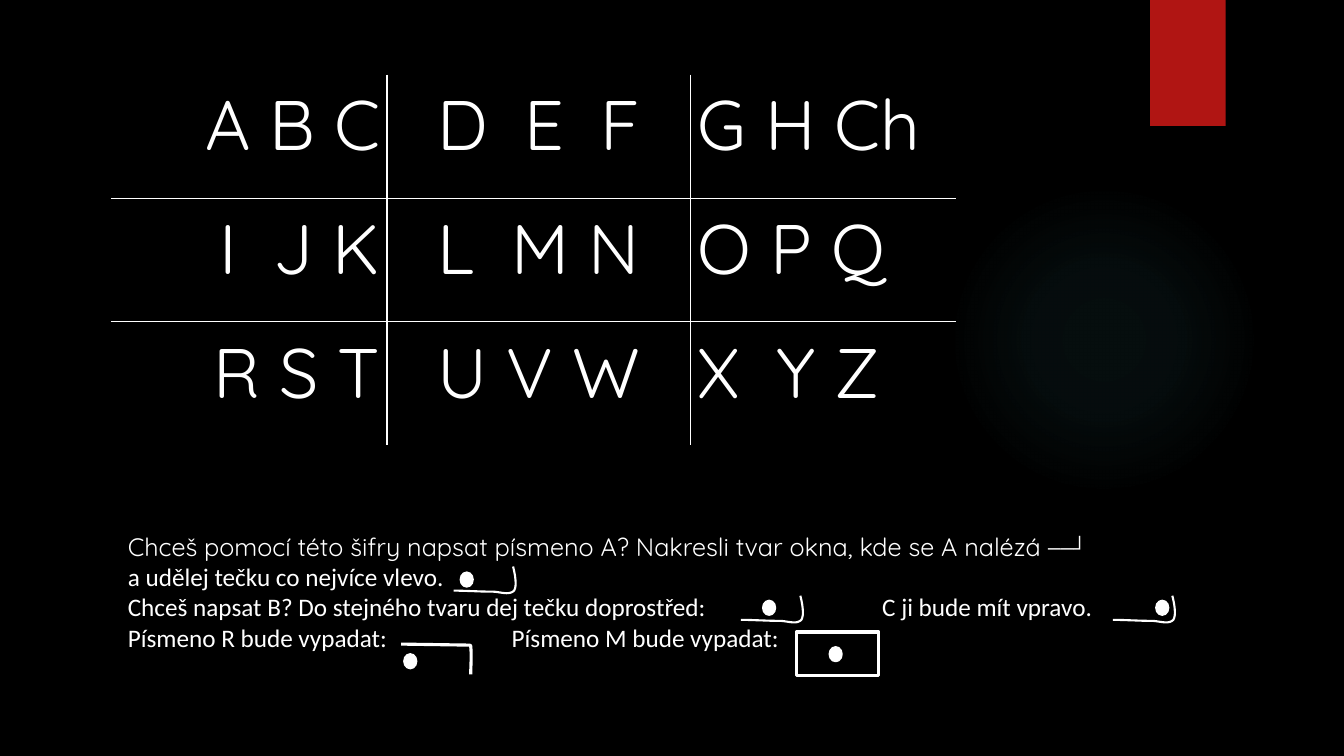
from lxml.etree import SubElement
from pptx import Presentation
from pptx.dml.color import RGBColor
from pptx.enum.shapes import MSO_SHAPE
from pptx.enum.text import PP_ALIGN
from pptx.oxml.ns import qn
from pptx.util import Inches, Pt

COLORS = {"back": "000000", "ink": "FFFFFF", "flag": "B01513", "glow": "50B9C1"}
PLAIN = "{2D5ABB26-0587-4C30-8999-92F81FD0307C}"
COLS, ROWS = 160, 90

# An underscore marks a wide gap between letters.
LETTERS = [
    ["A B C", "D_E_F", "G H Ch"],
    ["I_J K", "L_M N", "O P Q"],
    ["R S T", "U V W", "X_Y Z"],
]
SIDES = [PP_ALIGN.RIGHT, PP_ALIGN.CENTER, PP_ALIGN.LEFT]

# Each line of the guide with its tab stop in columns.
GUIDE = [
    ("Chceš pomocí této šifry napsat písmeno A? Nakresli tvar okna, kde se A nalézá ──┘", None),
    ("a udělej tečku co nejvíce vlevo.", None),
    ("Chceš napsat B? Do stejného tvaru dej tečku doprostřed:\tC ji bude mít vpravo.", 89.8),
    ("Písmeno R bude vypadat:\tPísmeno M bude vypadat:", 45.7),
]

# Start point, then cubic curves (three points) or straight lines (one point).
HOOK = [
    [(0, 2.88)],
    [(1.56, 2.88), (3.12, 3), (4.68, 3)],
    [(5.52, 3), (6.6, 3.48), (7.2, 2.88)],
    [(7.68, 2.16), (7.08, 0), (7.08, 0)],
]
CORNER = [
    [(0, 0)],
    [(7.8, 0.12)],
    [(8, 0.12), (8.28, 0.12), (8.28, 0.24)],
    [(8.4, 1.44), (8.28, 2.52), (8.28, 3.6)],
]
HOOKS = [(54, 67.44), (88.2, 70.92), (132.48, 70.92)]
DOTS = [(54.84, 68.16), (90.84, 71.52), (137.64, 71.52), (98.76, 77.04), (48.12, 77.88)]


def color(name):
    return RGBColor.from_string(COLORS[name])


def trace(parts, steps=10):
    """Turn lines and cubic curves into a list of points."""
    points = list(parts[0])
    for part in parts[1:]:
        if len(part) == 1:
            points += part
            continue
        knots = [points[-1], *part]
        for step in range(1, steps + 1):
            t = step / steps
            mix = [(1 - t) ** 3, 3 * t * (1 - t) ** 2, 3 * t * t * (1 - t), t ** 3]
            points.append(tuple(sum(m * k[axis] for m, k in zip(mix, knots)) for axis in (0, 1)))
    return points


class Board:
    def __init__(self, deck):
        self.wide, self.high = deck.slide_width, deck.slide_height
        self.slide = deck.slides.add_slide(deck.slide_layouts[6])
        self.shapes = self.slide.shapes
        fill = self.slide.background.fill
        fill.solid()
        fill.fore_color.rgb = color("back")

    def x(self, cols):
        return round(self.wide * cols / COLS)

    def y(self, rows):
        return round(self.high * rows / ROWS)

    def area(self, left, top, width, height):
        return self.x(left), self.y(top), self.x(width), self.y(height)

    def paint(self, shape, fill=None, line=None):
        shape.shadow.inherit = False
        if fill:
            shape.fill.solid()
            shape.fill.fore_color.rgb = color(fill)
        else:
            shape.fill.background()
        if line:
            shape.line.color.rgb = color("ink")
            shape.line.width = Pt(line)
        else:
            shape.line.fill.background()

    def shape(self, kind, area, fill=None, line=None):
        shape = self.shapes.add_shape(kind, *self.area(*area))
        self.paint(shape, fill, line)
        return shape

    def glow(self, area):
        shape = self.shape(MSO_SHAPE.OVAL, area, "glow")
        old = shape.fill._xPr.find(qn("a:solidFill"))
        grad = old.makeelement(qn("a:gradFill"), {"rotWithShape": "1"})
        stops = SubElement(grad, qn("a:gsLst"))
        for place, alpha in [(0, 7), (36, 6), (69, 0)]:
            stop = SubElement(stops, qn("a:gs"), pos=str(place * 1000))
            tone = SubElement(stop, qn("a:srgbClr"), val=COLORS["glow"])
            SubElement(tone, qn("a:alpha"), val=str(alpha * 1000))
        fade = SubElement(grad, qn("a:path"), {"path": "circle"})
        SubElement(fade, qn("a:fillToRect"), dict.fromkeys("ltrb", "50000"))
        old.getparent().replace(old, grad)

    def stroke(self, left, top, parts, line):
        points = [(self.x(left + x), self.y(top + y)) for x, y in trace(parts)]
        pen = self.shapes.build_freeform(*points[0])
        pen.add_line_segments(points[1:], close=False)
        self.paint(pen.convert_to_shape(), line=line)

    def style(self, run, size, font):
        run.font.size = Pt(size)
        run.font.name = font
        run.font.color.rgb = color("ink")

    def edge(self, cell, tags):
        """Draw the named cell borders and clear the others."""
        props = cell._tc.get_or_add_tcPr()
        for spot, tag in enumerate(["lnL", "lnR", "lnT", "lnB"]):
            line = props.makeelement(qn("a:" + tag), {"w": str(Pt(1))})
            if tag in tags:
                tone = SubElement(line, qn("a:solidFill"))
                SubElement(tone, qn("a:srgbClr"), val=COLORS["ink"])
            else:
                SubElement(line, qn("a:noFill"))
            props.insert(spot, line)

    def letters(self, cell, text, side):
        cell.margin_left = cell.margin_right = Inches(0.07)
        cell.margin_top = cell.margin_bottom = 0
        para = cell.text_frame.paragraphs[0]
        para.alignment = side
        para.line_spacing = 1.07
        for spot, part in enumerate(text.split("_")):
            if spot:
                gap = para.add_run()
                gap.text = " "
                self.style(gap, 50, "Quicksand")
                gap.font._element.set("spc", "1250")
            run = para.add_run()
            run.text = part
            self.style(run, 50, "Quicksand")

    def table(self, left, top, widths, height):
        count = len(LETTERS)
        area = self.area(left, top, sum(widths), height * count)
        table = self.shapes.add_table(count, len(widths), *area).table
        table.first_row = table.horz_banding = False
        table._tbl.tblPr.find(qn("a:tableStyleId")).text = PLAIN
        for col, width in zip(table.columns, widths):
            col.width = self.x(width)
        for r, texts in enumerate(LETTERS):
            table.rows[r].height = self.y(height)
            for c, text in enumerate(texts):
                cell = table.cell(r, c)
                cell.fill.background()
                inner = {"lnL": c > 0, "lnR": c < len(widths) - 1, "lnT": r > 0, "lnB": r < count - 1}
                self.edge(cell, [tag for tag, show in inner.items() if show])
                self.letters(cell, text, SIDES[c])

    def guide(self, area):
        frame = self.shapes.add_textbox(*self.area(*area)).text_frame
        frame.word_wrap = True
        frame.text = "\n".join(text for text, stop in GUIDE)
        for para, (text, stop) in zip(frame.paragraphs, GUIDE):
            if stop:
                tabs = SubElement(para._p.get_or_add_pPr(), qn("a:tabLst"))
                SubElement(tabs, qn("a:tab"), pos=str(self.x(stop)), algn="l")
            for run in para.runs:
                self.style(run, 18, "Calibri")
        first = frame.paragraphs[0]
        words, mark = GUIDE[0][0][:-3], GUIDE[0][0][-3:]
        first.runs[0].text = words
        self.style(first.runs[0], 18, "Quicksand")
        tail = first.add_run()
        tail.text = mark
        self.style(tail, 18, "Calibri")


def main():
    deck = Presentation()
    deck.slide_width, deck.slide_height = Inches(13.33), Inches(7.5)
    board = Board(deck)
    board.glow((112.92, 21.96, 36.96, 36.96))
    board.shape(MSO_SHAPE.RECTANGLE, (136.92, 0, 9, 15), "flag")
    board.table(13.2, 8.88, [32.88, 36.12, 31.68], 14.72)
    board.guide((14.04, 62.64, 123.48, 15.72))
    for left, top in HOOKS:
        board.stroke(left, top, HOOK, 1.5)
    board.stroke(47.76, 76.68, CORNER, 2.25)
    board.shape(MSO_SHAPE.RECTANGLE, (94.8, 75.24, 9.84, 5.16), line=2.25)
    for left, top in DOTS:
        board.shape(MSO_SHAPE.OVAL, (left, top, 1.44, 1.68), "ink", 1.5)
    deck.save("out.pptx")


if __name__ == "__main__":
    main()
